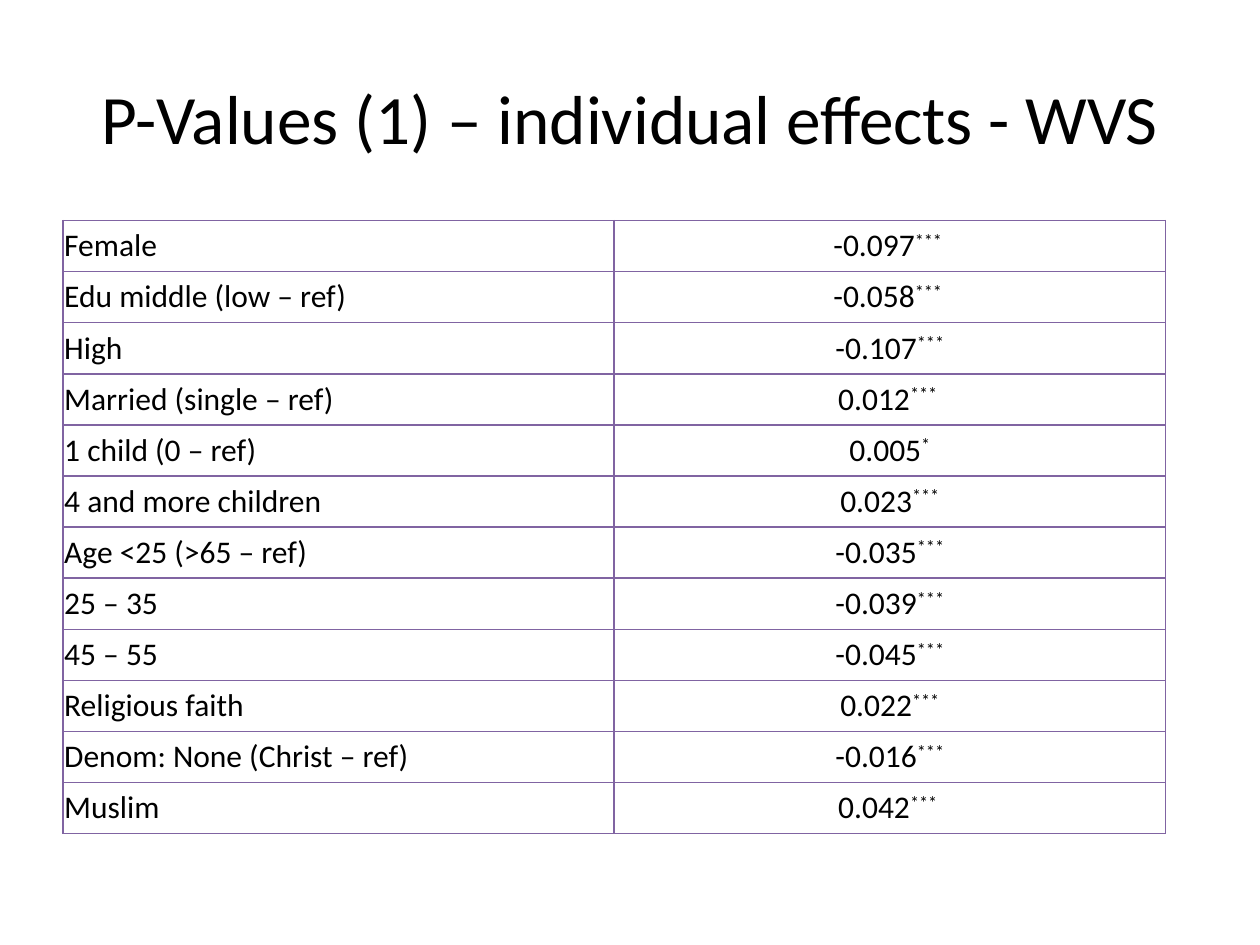
from lxml.etree import SubElement
from pptx import Presentation
from pptx.dml.color import RGBColor
from pptx.enum.text import MSO_ANCHOR as Anchor, PP_ALIGN as Align
from pptx.oxml.ns import qn
from pptx.util import Pt

BLACK = RGBColor(0x00, 0x00, 0x00)
WHITE = RGBColor(0xFF, 0xFF, 0xFF)
PURPLE = RGBColor(0x80, 0x64, 0xA2)

TITLE = "P-Values (1) – individual effects - WVS"
EFFECTS = [
    ("Female", "-0.097", "*** "),
    ("Edu middle (low – ref)", "-0.058", "*** "),
    ("High", "-0.107", "***"),
    ("Married (single – ref)", "0.012", "*** "),
    ("1 child (0 – ref)", "0.005", "*"),
    ("4 and more children", "0.023", "***"),
    ("Age <25 (>65 – ref)", "-0.035", "***"),
    ("25 – 35", "-0.039", "***"),
    ("45 – 55", "-0.045", "***"),
    ("Religious faith", "0.022", "***"),
    ("Denom: None (Christ – ref)", "-0.016", "***"),
    ("Muslim", "0.042", "*** "),
]


def add_text(p, text, *, font="Calibri", size=18, color=BLACK, align=Align.LEFT, raised=0):
    """Append a run to p; raised is the superscript offset in percent."""
    p.alignment = align
    r = p.add_run()
    r.text = text
    r.font.name = font
    r.font.size = Pt(size)
    r.font.color.rgb = color
    if raised:
        r.font._element.set("baseline", str(raised * 1000))


class SlideBuilder:
    """Holds the table style and the current slide."""

    def __init__(self, prs, border=PURPLE, border_width=1, fill=WHITE, margin=0.72):
        self.slide = prs.slides.add_slide(prs.slide_layouts[5])
        self.border = border
        self.border_width = border_width
        self.fill = fill
        self.margin = margin

    def title(self, text, left, top, width, height):
        sp = self.slide.shapes.title
        sp.left, sp.top, sp.width, sp.height = map(Pt, (left, top, width, height))
        tf = sp.text_frame
        tf.word_wrap = True
        tf.vertical_anchor = Anchor.MIDDLE
        add_text(tf.paragraphs[0], text, size=39.6, align=Align.CENTER)

    def table(self, rows, left, top, width, row_height):
        frame = self.slide.shapes.add_table(
            len(rows), 2, Pt(left), Pt(top), Pt(width), Pt(row_height * len(rows)))
        table = frame.table
        table.first_row = table.horz_banding = False
        for row, (label, value, stars) in zip(table.rows, rows):
            row.height = Pt(row_height)
            label_cell, value_cell = row.cells
            add_text(self.style_cell(label_cell), label)
            p = self.style_cell(value_cell)
            add_text(p, value, align=Align.CENTER)
            add_text(p, stars, align=Align.CENTER, raised=30)

    def style_cell(self, cell):
        """Set margins, borders and fill; return the cell's paragraph."""
        cell.margin_left = cell.margin_right = Pt(self.margin)
        cell.margin_top = cell.margin_bottom = Pt(self.margin)
        cell.vertical_anchor = Anchor.MIDDLE
        tc_pr = cell._tc.get_or_add_tcPr()
        for side in ("a:lnL", "a:lnR", "a:lnT", "a:lnB"):
            ln = SubElement(tc_pr, qn(side), w=str(Pt(self.border_width)))
            solid = SubElement(ln, qn("a:solidFill"))
            SubElement(solid, qn("a:srgbClr"), val=str(self.border))
        cell.fill.solid()
        cell.fill.fore_color.rgb = self.fill
        return cell.text_frame.paragraphs[0]


def main():
    prs = Presentation()
    prs.slide_width, prs.slide_height = Pt(720), Pt(540)
    builder = SlideBuilder(prs)
    builder.title(TITLE, 36, 21.6, 648, 90)
    builder.table(EFFECTS, 36, 126, 630, 29.2)
    prs.save("out.pptx")


if __name__ == "__main__":
    main()
